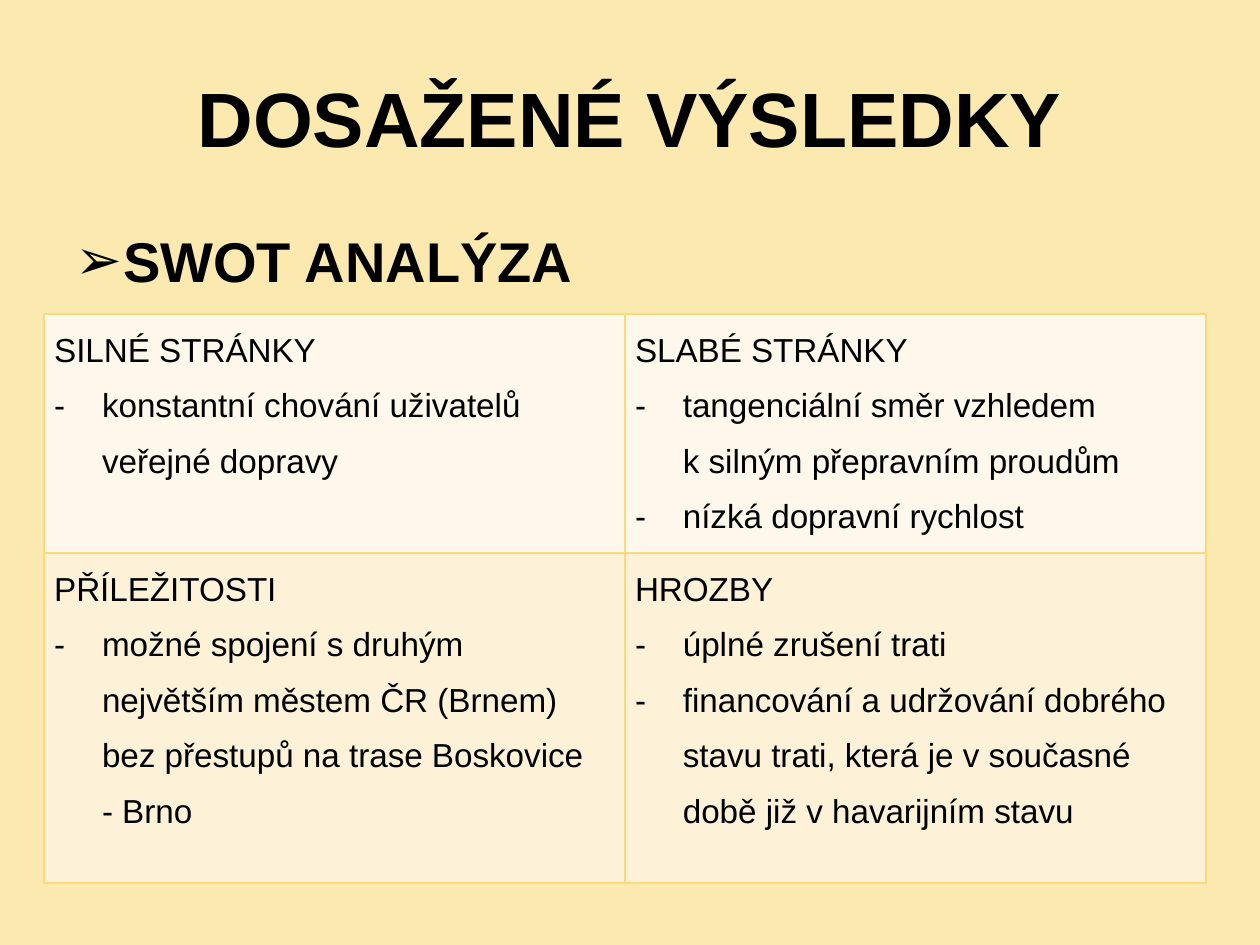
from lxml.etree import SubElement
from pptx import Presentation
from pptx.dml.color import RGBColor
from pptx.enum.text import MSO_ANCHOR as Anchor, PP_ALIGN as Align
from pptx.oxml.ns import qn
from pptx.util import Inches, Pt

COLORS = {
    "background": "FCE9AF",
    "text": "000000",
    "border": "FADA7A",
    "internal": "FEF8EC",
    "external": "FDF1D7",
}
FONT = "Arial"
HANGING = Inches(0.38)
PREPOSITIONS = ("k", "s", "v")
SWOT = [
    ("internal", 1.71, [
        ("SILNÉ STRÁNKY", ["konstantní chování uživatelů veřejné dopravy"]),
        ("SLABÉ STRÁNKY", ["tangenciální směr vzhledem k silným přepravním proudům",
                           "nízká dopravní rychlost"]),
    ]),
    ("external", 2.62, [
        ("PŘÍLEŽITOSTI", ["možné spojení s druhým největším městem ČR (Brnem) "
                          "bez přestupů na trase Boskovice - Brno"]),
        ("HROZBY", ["úplné zrušení trati",
                    "financování a udržování dobrého stavu trati, která je "
                    "v současné době již v havarijním stavu"]),
    ]),
]


def rgb(name):
    """Return the named palette colour."""
    return RGBColor.from_string(COLORS[name])


def bind_prepositions(text):
    """Join one-letter prepositions to the next word with a no-break space."""
    words = text.split()
    return "".join(word + (chr(160) if word in PREPOSITIONS else " ")
                   for word in words).strip()


def write(paragraph, text, size=19, bold=False, align=Align.LEFT,
          bullet=None, spacing=None, before=None):
    """Fill a paragraph with formatted text and an optional hanging bullet."""
    paragraph.alignment = align
    if spacing:
        paragraph.line_spacing = spacing
    if before:
        paragraph.space_before = Pt(before)
    if bullet:
        properties = paragraph._p.get_or_add_pPr()
        properties.set("marL", str(HANGING))
        properties.set("indent", str(-HANGING))
        SubElement(properties, qn("a:buFont"), typeface=FONT)
        SubElement(properties, qn("a:buChar"), char=bullet)
    run = paragraph.add_run()
    run.text = bind_prepositions(text)
    run.font.name = FONT
    run.font.size = Pt(size)
    run.font.bold = bold
    run.font.color.rgb = rgb("text")


def add_heading(slide, box, text, anchor=Anchor.TOP, **style):
    """Place one line of heading text in the given box."""
    frame = slide.shapes.add_textbox(*box).text_frame
    frame.word_wrap = True
    frame.vertical_anchor = anchor
    write(frame.paragraphs[0], text, bold=True, **style)


def outline_cell(cell):
    """Draw a thin border on all four sides of a cell."""
    properties = cell._tc.get_or_add_tcPr()
    for side in ("lnL", "lnR", "lnT", "lnB"):
        line = SubElement(properties, qn(f"a:{side}"), w=str(Pt(1)))
        fill = SubElement(line, qn("a:solidFill"))
        SubElement(fill, qn("a:srgbClr"), val=COLORS["border"])


def fill_quadrant(cell, heading, points, color):
    """Write one SWOT quadrant with its heading and points."""
    cell.margin_left, cell.margin_right = Inches(0.08), Inches(0.22)
    cell.margin_top = cell.margin_bottom = 0
    outline_cell(cell)
    cell.fill.solid()
    cell.fill.fore_color.rgb = rgb(color)
    frame = cell.text_frame
    write(frame.paragraphs[0], heading, spacing=1.5)
    for point in points:
        write(frame.add_paragraph(), point, bullet="-", spacing=1.5)


def add_swot(slide, box):
    """Place the SWOT table in the given box."""
    table = slide.shapes.add_table(len(SWOT), 2, *box).table
    for row, (color, height, quadrants) in enumerate(SWOT):
        table.rows[row].height = Inches(height)
        for column, (heading, points) in enumerate(quadrants):
            fill_quadrant(table.cell(row, column), heading, points, color)


def main():
    """Build and save the results slide."""
    deck = Presentation()
    deck.slide_width, deck.slide_height = Inches(10), Inches(7.5)
    slide = deck.slides.add_slide(deck.slide_layouts[6])
    slide.background.fill.solid()
    slide.background.fill.fore_color.rgb = rgb("background")
    title_box = [Inches(n) for n in (0.5, 0.3, 9, 1.25)]
    section_box = [Inches(n) for n in (0.5, 1.75, 9, 4.95)]
    swot_box = [Inches(n) for n in (0.35, 2.49, 9.22, 4.33)]
    add_heading(slide, title_box, "DOSAŽENÉ VÝSLEDKY", anchor=Anchor.MIDDLE,
                size=44, align=Align.CENTER)
    add_heading(slide, section_box, "SWOT ANALÝZA", size=32, bullet="➢", before=6.4)
    add_swot(slide, swot_box)
    deck.save("out.pptx")


if __name__ == "__main__":
    main()
